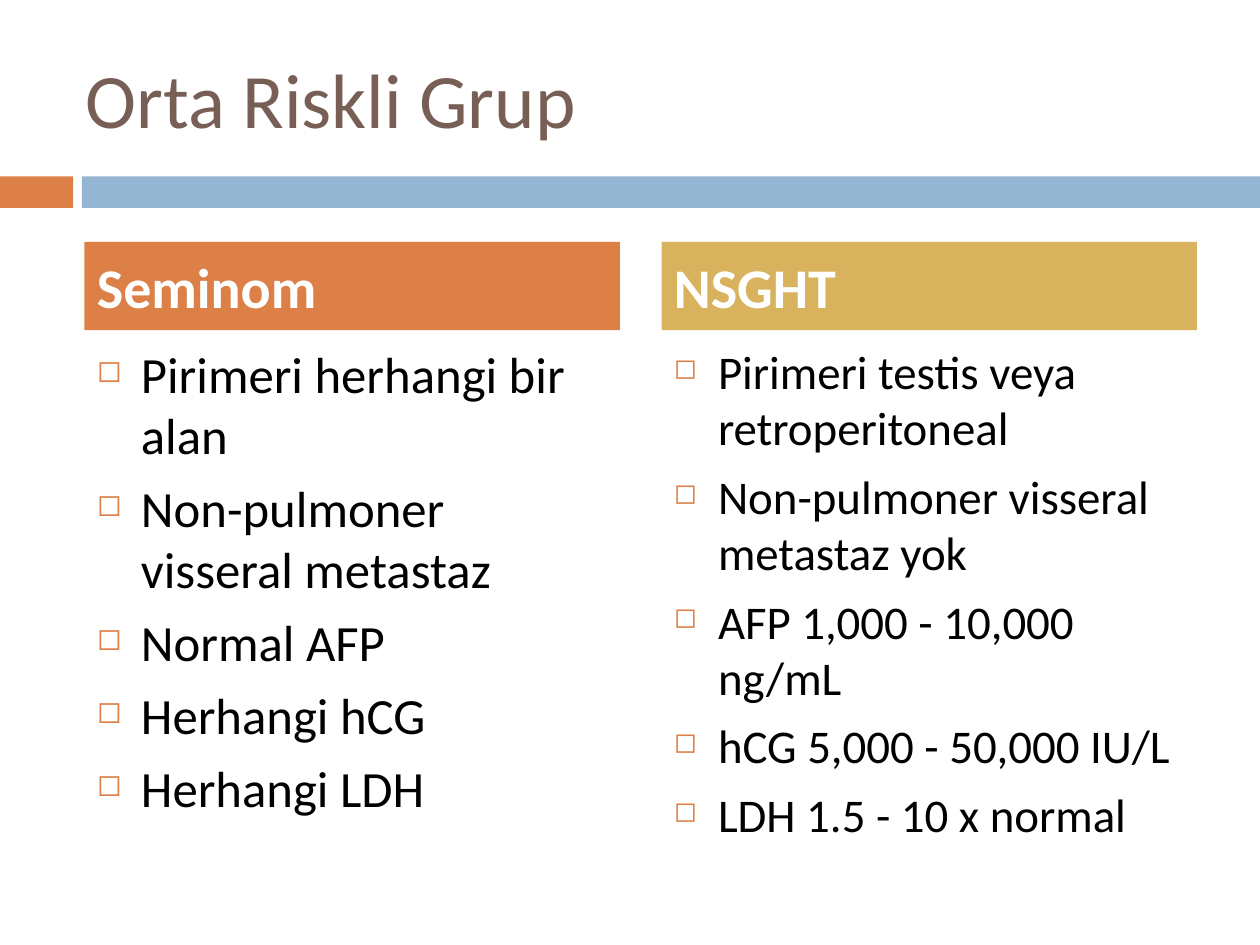
from dataclasses import dataclass

import pptx
import pptx.dml.color
import pptx.enum.shapes
import pptx.enum.text
import pptx.oxml.ns
import pptx.util
from lxml import etree

Inches = pptx.util.Inches
Pt = pptx.util.Pt
Anchor = pptx.enum.text.MSO_ANCHOR


@dataclass(frozen=True)
class Theme:
    font: str = "Calibri"
    title: str = "775F55"
    body: str = "000000"
    light: str = "FFFFFF"
    orange: str = "DD8047"
    blue: str = "94B6D2"
    gold: str = "D8B25C"
    title_size: float = 44
    heading_size: float = 32
    left_size: float = 29
    right_size: float = 26.8
    space_before: float = 7


THEME = Theme()


def color(value):
    return pptx.dml.color.RGBColor.from_string(value)


def add_bar(page, box, fill):
    bar = page.shapes.add_shape(
        pptx.enum.shapes.MSO_SHAPE.RECTANGLE, *map(Inches, box))
    bar.shadow.inherit = False
    bar.fill.solid()
    bar.fill.fore_color.rgb = color(fill)
    bar.line.fill.background()
    return bar


def add_bullet(para):
    properties = para._p.get_or_add_pPr()
    properties.set("marL", str(Inches(0.35)))
    properties.set("indent", str(Inches(-0.35)))

    def child(parent, tag, **attributes):
        return etree.SubElement(parent, pptx.oxml.ns.qn(tag), **attributes)

    child(child(properties, "a:buClr"), "a:srgbClr", val=THEME.orange)
    child(properties, "a:buSzPct", val="60000")
    child(properties, "a:buChar", char="◻")


def write_text(shape, lines, size, ink, bold=False, anchor=Anchor.TOP,
               before=0, bullets=False):
    frame = shape.text_frame
    frame.word_wrap = True
    frame.vertical_anchor = anchor
    for index, line in enumerate(lines):
        para = frame.add_paragraph() if index else frame.paragraphs[0]
        para.alignment = pptx.enum.text.PP_ALIGN.LEFT
        para.space_before = Pt(before)
        if bullets:
            add_bullet(para)
        span = para.add_run()
        span.text = line
        span.font.name = THEME.font
        span.font.size = Pt(size)
        span.font.bold = bold
        span.font.color.rgb = color(ink)


def add_title(page, box, title):
    shape = page.shapes.add_textbox(*map(Inches, box))
    write_text(shape, [title], THEME.title_size, THEME.title,
               anchor=Anchor.MIDDLE)


def add_band(page, box):
    left, top, width, height = box
    tab, gap = 0.58, 0.07
    add_bar(page, (left, top, tab, height), THEME.orange)
    add_bar(page, (left + tab + gap, top, width - tab - gap, height),
            THEME.blue)


def add_column(page, box, heading, fill, items, size):
    left, top, width, height = box
    heading_height, gap = 0.7, 0.05
    offset = heading_height + gap
    body = page.shapes.add_textbox(
        *map(Inches, (left, top + offset, width, height - offset)))
    write_text(body, items, size, THEME.body,
               before=THEME.space_before, bullets=True)
    bar = add_bar(page, (left, top, width, heading_height), fill)
    write_text(bar, [heading], THEME.heading_size, THEME.light, bold=True,
               anchor=Anchor.MIDDLE, before=THEME.space_before)


def main():
    deck = pptx.Presentation()
    deck.slide_width = Inches(10)
    deck.slide_height = Inches(7.5)
    page = deck.slides.add_slide(deck.slide_layouts[6])

    add_band(page, (0, 1.4, 10, 0.25))
    add_title(page, (0.58, 0.3, 8.92, 0.95), "Orta Riskli Grup")
    add_column(page, (0.67, 1.92, 4.25, 4.67), "Seminom", THEME.orange, [
        "Pirimeri herhangi bir alan",
        "Non-pulmoner visseral metastaz",
        "Normal AFP",
        "Herhangi hCG",
        "Herhangi LDH",
    ], THEME.left_size)
    add_column(page, (5.25, 1.92, 4.25, 4.67), "NSGHT", THEME.gold, [
        "Pirimeri testis veya retroperitoneal",
        "Non-pulmoner visseral metastaz yok",
        "AFP 1,000 - 10,000 ng/mL",
        "hCG 5,000 - 50,000 IU/L",
        "LDH 1.5 - 10 x normal",
    ], THEME.right_size)

    deck.save("out.pptx")


if __name__ == "__main__":
    main()
